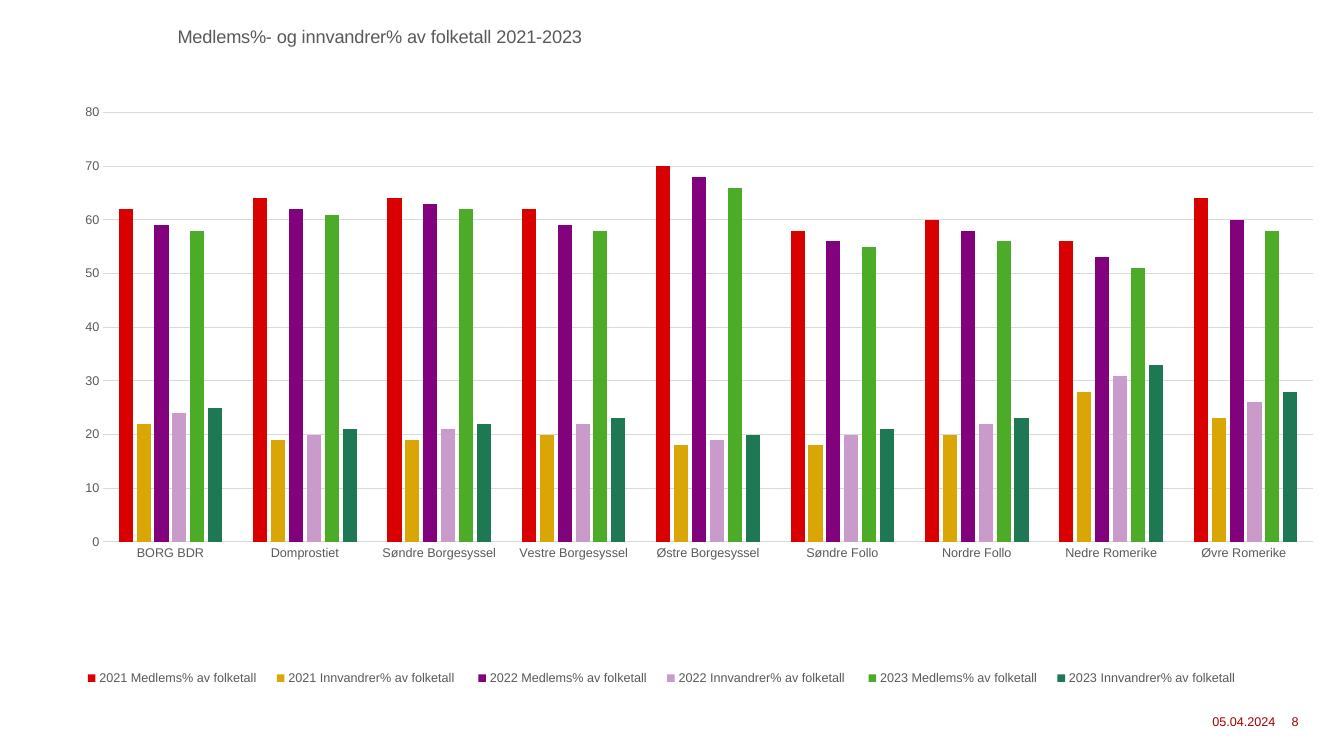
from dataclasses import dataclass
from typing import Optional

from lxml.etree import SubElement
from pptx import Presentation
from pptx.chart.data import CategoryChartData
from pptx.dml.color import RGBColor
from pptx.enum.chart import XL_CHART_TYPE, XL_LEGEND_POSITION, XL_TICK_MARK
from pptx.enum.text import MSO_ANCHOR, PP_ALIGN
from pptx.oxml.ns import qn
from pptx.util import Inches, Pt

FONT = "Arial"
COLORS = {
    "footer": "A30000",
    "label": "595959",
    "grid": "D9D9D9",
    "members_2021": "D90000",
    "immigrants_2021": "D9A605",
    "members_2022": "82027E",
    "immigrants_2022": "C89BCB",
    "members_2023": "4CAB27",
    "immigrants_2023": "1D7853",
}
DEANERIES = [
    "BORG BDR", "Domprostiet", "Søndre Borgesyssel", "Vestre Borgesyssel",
    "Østre Borgesyssel", "Søndre Follo", "Nordre Follo", "Nedre Romerike",
    "Øvre Romerike ",
]


@dataclass(frozen=True)
class Area:
    left: float
    top: float
    width: float
    height: float


@dataclass(frozen=True)
class Share:
    name: str
    color: str
    values: tuple[int, ...]


@dataclass(frozen=True)
class Footer:
    text: str
    area: Area
    align: PP_ALIGN


SHARES = [
    Share("2021 Medlems% av folketall", "members_2021",
          (62, 64, 64, 62, 70, 58, 60, 56, 64)),
    Share("2021 Innvandrer% av folketall ", "immigrants_2021",
          (22, 19, 19, 20, 18, 18, 20, 28, 23)),
    Share("2022 Medlems% av folketall", "members_2022",
          (59, 62, 63, 59, 68, 56, 58, 53, 60)),
    Share("2022 Innvandrer% av folketall ", "immigrants_2022",
          (24, 20, 21, 22, 19, 20, 22, 31, 26)),
    Share("2023 Medlems% av folketall", "members_2023",
          (58, 61, 62, 58, 66, 55, 56, 51, 58)),
    Share("2023 Innvandrer% av folketall ", "immigrants_2023",
          (25, 21, 22, 23, 20, 21, 23, 33, 28)),
]
FOOTERS = [
    Footer("05.04.2024", Area(86.05, 93.87, 8.85, 3.07), PP_ALIGN.RIGHT),
    Footer("8", Area(96.1, 93.87, 2.85, 3.07), PP_ALIGN.LEFT),
]
CHART_AREA = Area(1.13, 0, 97.82, 100)
PLOT_AREA = Area(6.7, 14.9, 92, 56.8)
LEGEND_AREA = Area(4.3, 87.2, 90, 5)
TITLE_AREA = Area(12.1, 3, 0, 0)

deck = Presentation()
deck.slide_width, deck.slide_height = Inches(13.33), Inches(7.5)
slide = deck.slides.add_slide(deck.slide_layouts[6])


def place(area: Area) -> tuple[int, int, int, int]:
    across, down = deck.slide_width / 100, deck.slide_height / 100
    return (round(area.left * across), round(area.top * down),
            round(area.width * across), round(area.height * down))


def rgb(key: str) -> RGBColor:
    return RGBColor.from_string(COLORS[key])


def style(font, size: float, color: str) -> None:
    font.name = FONT
    font.size = Pt(size)
    font.bold = False
    font.color.rgb = rgb(color)


def style_line(line) -> None:
    line.color.rgb = rgb("grid")
    line.width = Pt(0.75)


def set_layout(parent, area: Area, after: Optional[str] = None,
               inner: bool = False) -> None:
    for previous in parent.findall(qn("c:layout")):
        parent.remove(previous)
    layout = SubElement(parent, qn("c:layout"))
    position = 0 if after is None else parent.index(parent.find(qn(after))) + 1
    parent.insert(position, layout)
    manual = SubElement(layout, qn("c:manualLayout"))
    settings = {"layoutTarget": "inner"} if inner else {}
    settings |= {"xMode": "edge", "yMode": "edge",
                 "x": area.left / 100, "y": area.top / 100}
    if area.width:
        settings |= {"w": area.width / 100, "h": area.height / 100}
    for tag, value in settings.items():
        SubElement(manual, qn(f"c:{tag}")).set("val", str(value))


def draw_chart() -> None:
    data = CategoryChartData()
    data.categories = DEANERIES
    for share in SHARES:
        data.add_series(share.name, share.values)
    chart = slide.shapes.add_chart(
        XL_CHART_TYPE.COLUMN_CLUSTERED, *place(CHART_AREA), data).chart
    style(chart.font, 10, "label")

    columns = chart.plots[0]
    columns.gap_width, columns.overlap = 219, -27
    columns.vary_by_categories = False
    for series, share in zip(columns.series, SHARES):
        series.format.fill.solid()
        series.format.fill.fore_color.rgb = rgb(share.color)
        series.invert_if_negative = False

    for axis in (chart.category_axis, chart.value_axis):
        axis.major_tick_mark = axis.minor_tick_mark = XL_TICK_MARK.NONE
        style(axis.tick_labels.font, 9, "label")
    style_line(chart.category_axis.format.line)
    percent = chart.value_axis
    percent.minimum_scale, percent.maximum_scale, percent.major_unit = 0, 80, 10
    percent.format.line.fill.background()
    style_line(percent.major_gridlines.format.line)

    chart.has_title = True
    heading = chart.chart_title.text_frame
    heading.text = "Medlems%- og innvandrer% av folketall 2021-2023"
    style(heading.paragraphs[0].font, 13, "label")
    chart.has_legend = True
    chart.legend.position = XL_LEGEND_POSITION.BOTTOM
    chart.legend.include_in_layout = False
    style(chart.legend.font, 9, "label")

    set_layout(chart._chartSpace.chart.plotArea, PLOT_AREA, inner=True)
    set_layout(chart.chart_title._element, TITLE_AREA, after="c:tx")
    set_layout(chart.legend._element, LEGEND_AREA, after="c:legendPos")


def draw_footer(footer: Footer) -> None:
    frame = slide.shapes.add_textbox(*place(footer.area)).text_frame
    frame.word_wrap = True
    frame.vertical_anchor = MSO_ANCHOR.MIDDLE
    frame.margin_left = frame.margin_right = 0
    frame.margin_top = frame.margin_bottom = 0
    frame.text = footer.text
    line = frame.paragraphs[0]
    line.alignment = footer.align
    line.space_after = Pt(6)
    style(line.font, 9, "footer")


for footer in FOOTERS:
    draw_footer(footer)
draw_chart()
deck.save("out.pptx")
